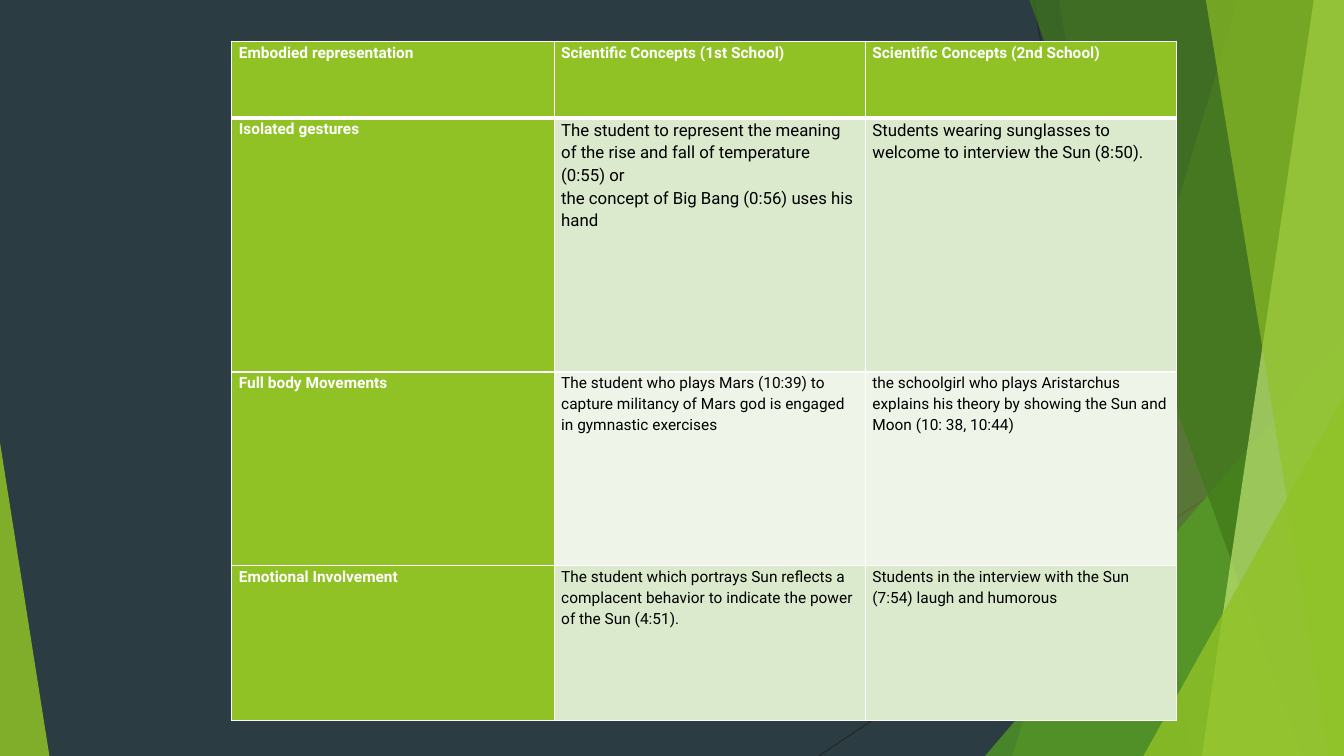
from collections import namedtuple

from lxml.etree import SubElement
from pptx import Presentation
from pptx.dml.color import RGBColor
from pptx.enum.shapes import MSO_CONNECTOR as Connector, MSO_SHAPE as Shape
from pptx.oxml.ns import qn
from pptx.util import Inches, Pt

Box = namedtuple("Box", "left top width height")

COLORS = {
    "night": "2C3C43", "thread": "262626", "lime": "90C226", "leaf": "54A021",
    "forest": "3F7819", "pale": "C0E474", "band": "DBE9CD", "light": "EEF4E8",
    "white": "FFFFFF", "black": "000000",
}
SLIDE = Box(0, 0, 13.33, 7.5)
FACET_PANEL = Box(8.12, 0, 5.21, 7.5)
LEFT_WEDGE = Box(0, 4.39, 0.49, 3.11)
TABLE_BOX = Box(2.3, 0.41, 9.37, 6.74)

THREADS = [((2.13, 0), (3.46, 7.5)), ((5.21, 4.03), (0, 7.5))]
FACETS = [
    ("slab", 4.16, 1.92, "lime", 30),
    ("slab", 2.38, 3.71, "lime", 20),
    ("wedge", 3.56, 4.17, "leaf", 72),
    ("slab", 2.09, 4.79, "forest", 70),
    ("slab", 4.91, 3.8, "pale", 70),
    ("slab", 3.84, 5.06, "lime", 65),
    ("wedge", 1.99, 3.57, "lime", 80),
]

COLUMN_WIDTHS = [3.2, 3.09, 3.09]
ROW_HEIGHTS = [0.76, 2.53, 1.93, 1.54]
ROWS = [
    ["Embodied representation",
     "Scientific Concepts (1st School)",
     "Scientific Concepts (2nd School)"],
    ["Isolated gestures",
     "The student to represent the meaning of the rise and fall of temperature (0:55) or\n"
     "the concept of Big Bang (0:56) uses his hand",
     "Students wearing sunglasses to welcome to interview the Sun (8:50)."],
    ["Full body Movements",
     "The student who plays Mars (10:39) to capture militancy of Mars god is engaged "
     "in gymnastic exercises",
     "the schoolgirl who plays Aristarchus explains his theory by showing the Sun and "
     "Moon (10: 38, 10:44)"],
    ["Emotional Involvement",
     "The student which portrays Sun reflects a complacent behavior to indicate the power "
     "of the Sun (4:51).",
     "Students in the interview with the Sun (7:54) laugh and humorous"],
]


def rgb(name):
    return RGBColor.from_string(COLORS[name])


def tint(shape, color, opacity):
    shape.shadow.inherit = False
    shape.line.fill.background()
    shape.fill.solid()
    shape.fill.fore_color.rgb = rgb(color)
    color_element = shape.fill._xPr.find(qn("a:solidFill"))[0]
    SubElement(color_element, qn("a:alpha"), val=str(opacity * 1000))


def add_wedge(page, box, apex, color, opacity):
    wedge = page.shapes.add_shape(Shape.ISOSCELES_TRIANGLE, *map(Inches, box))
    wedge.adjustments[0] = apex
    tint(wedge, color, opacity)


def add_slab(page, box, top_left, bottom_left, color, opacity):
    right, bottom = box.left + box.width, box.top + box.height
    corners = [(box.left + top_left, box.top), (right, box.top),
               (right, bottom), (box.left + bottom_left, bottom)]
    points = [(Inches(x), Inches(y)) for x, y in corners]
    builder = page.shapes.build_freeform(*points[0])
    builder.add_line_segments(points[1:], close=True)
    tint(builder.convert_to_shape(), color, opacity)


def add_threads(page, box):
    for ends in THREADS:
        points = [Inches(value) for x, y in ends for value in (box.left + x, box.top + y)]
        thread = page.shapes.add_connector(Connector.STRAIGHT, *points)
        thread.line.color.rgb = rgb("thread")
        thread.line.width = Pt(0.75)
        SubElement(thread._element.spPr, qn("a:effectLst"))


def add_facets(page, box):
    for kind, first, second, color, opacity in FACETS:
        if kind == "slab":
            add_slab(page, box, first, second, color, opacity)
        else:
            corner = Box(box.left + box.width - first, box.top + box.height - second,
                         first, second)
            add_wedge(page, corner, 1, color, opacity)


def add_borders(cell, top, bottom):
    properties = cell._tc.get_or_add_tcPr()
    for side, points in (("L", 1), ("R", 1), ("T", top), ("B", bottom)):
        border = SubElement(properties, qn(f"a:ln{side}"), w=str(Pt(points)))
        fill = SubElement(border, qn("a:solidFill"))
        SubElement(fill, qn("a:srgbClr"), val=COLORS["white"])


def format_cell(cell, text, row, column):
    heading = row == 0 or column == 0
    add_borders(cell, top=3 if row == 1 else 1, bottom=3 if row == 0 else 1)
    cell.fill.solid()
    cell.fill.fore_color.rgb = rgb("lime" if heading else "band" if row % 2 else "light")
    cell.margin_left = cell.margin_right = Inches(0.07)
    cell.margin_top = cell.margin_bottom = 0
    cell.text = text
    for para in cell.text_frame.paragraphs:
        para.line_spacing = 1.15
        para.font.name = "Roboto"
        para.font.size = Pt(12 if row == 1 and not heading else 11)
        para.font.bold = heading
        para.font.color.rgb = rgb("white" if heading else "black")


def add_concept_table(page, box):
    frame = page.shapes.add_table(len(ROWS), len(COLUMN_WIDTHS), *map(Inches, box))
    table = frame.table
    for column, width in zip(table.columns, COLUMN_WIDTHS):
        column.width = Inches(box.width * width / sum(COLUMN_WIDTHS))
    for row, height in zip(table.rows, ROW_HEIGHTS):
        row.height = Inches(box.height * height / sum(ROW_HEIGHTS))
    for row, texts in enumerate(ROWS):
        for column, text in enumerate(texts):
            format_cell(table.cell(row, column), text, row, column)


def main():
    deck = Presentation()
    deck.slide_width, deck.slide_height = Inches(SLIDE.width), Inches(SLIDE.height)
    page = deck.slides.add_slide(deck.slide_layouts[6])
    page.background.fill.solid()
    page.background.fill.fore_color.rgb = rgb("night")
    add_threads(page, FACET_PANEL)
    add_facets(page, FACET_PANEL)
    add_wedge(page, LEFT_WEDGE, 0, "lime", 85)
    add_concept_table(page, TABLE_BOX)
    deck.save("out.pptx")


if __name__ == "__main__":
    main()
